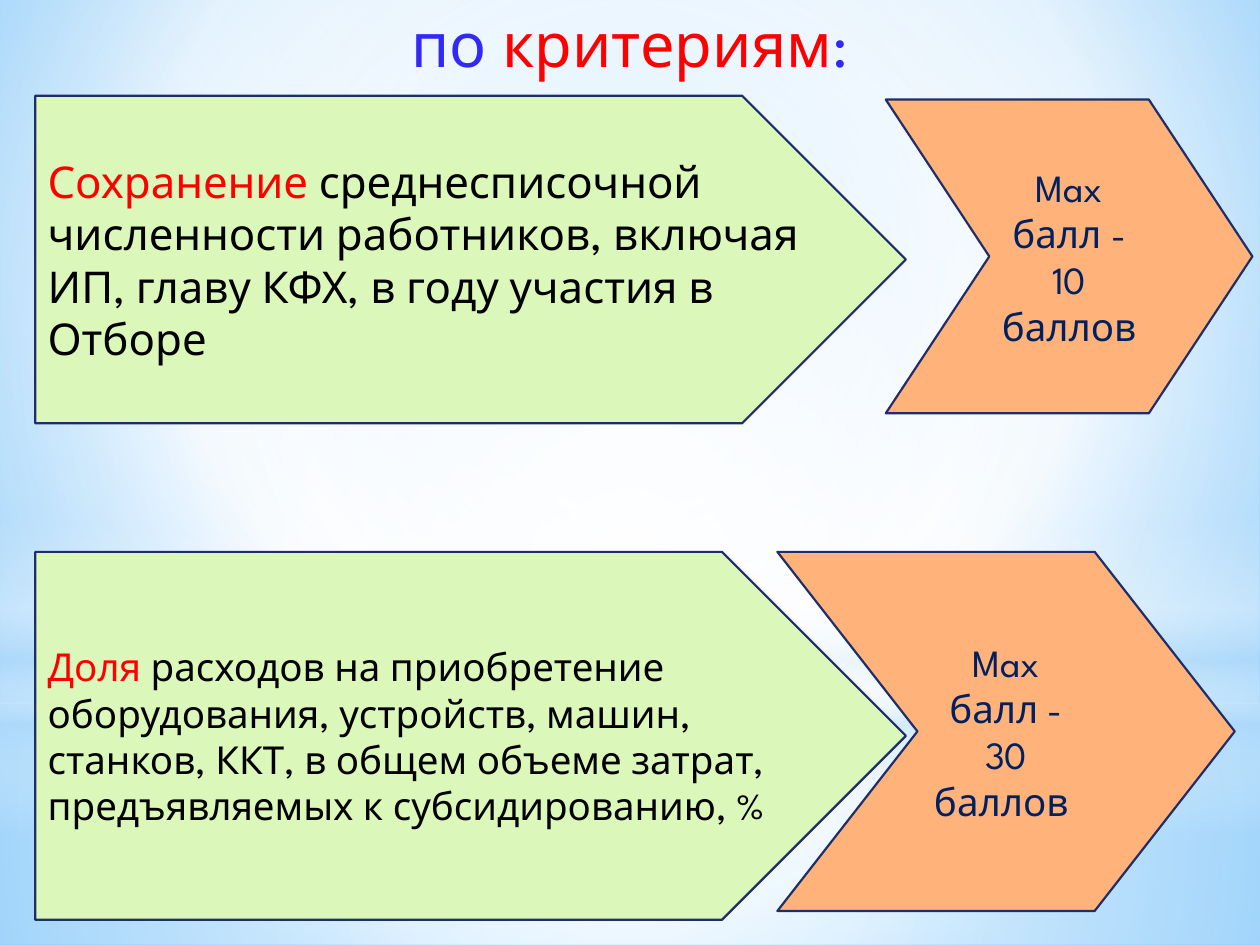
from pptx import Presentation
from pptx.dml.color import RGBColor
from pptx.enum.shapes import MSO_SHAPE
from pptx.enum.text import MSO_ANCHOR, PP_ALIGN
from pptx.oxml import parse_xml
from pptx.oxml.ns import nsdecls
from pptx.util import Inches, Pt

HUES = {
    "blue": "3329F7", "red": "FF0000", "black": "000000", "navy": "002060",
    "edge": "1F2E69", "green": "DCF7BA", "peach": "FFB37A",
    "white": "FFFFFF", "pale": "B4DCFA", "sky": "9ED5FF", "deep": "5BB9FF",
}
MID = (50, 50, 50, 50)


class Deck:
    """Holds the style and the current slide, and draws each kind of element."""

    def __init__(self):
        self.file = Presentation()
        self.file.slide_width, self.file.slide_height = Inches(10), Inches(7.5)
        self.slide = self.file.slides.add_slide(self.file.slide_layouts[6])
        self.font = {"name": "League Spartan"}
        self.frame = {"word_wrap": True, "vertical_anchor": MSO_ANCHOR.MIDDLE}

    def hue(self, name):
        return RGBColor.from_string(HUES[name])

    def apply(self, item, form):
        for key, value in form.items():
            setattr(item, key, value)

    def shade(self, fill, root, stops, rect=None):
        fill.gradient()
        old = root.xpath(".//a:gradFill")[0]
        marks = "".join(
            f'<a:gs pos="{pos * 1000}"><a:srgbClr val="{HUES[name]}">'
            f'<a:alpha val="{alpha * 1000}"/></a:srgbClr></a:gs>'
            for pos, name, alpha in stops)
        way = '<a:lin ang="5400000" scaled="0"/>'
        if rect:
            sides = " ".join(f'{s}="{v * 1000}"' for s, v in zip("ltrb", rect))
            way = f'<a:path path="circle"><a:fillToRect {sides}/></a:path>'
        new = parse_xml(f'<a:gradFill {nsdecls("a")} rotWithShape="1">'
                        f'<a:gsLst>{marks}</a:gsLst>{way}</a:gradFill>')
        old.getparent().replace(old, new)

    def ground(self, stops, rect):
        self.shade(self.slide.background.fill, self.slide._element, stops, rect)

    def shape(self, kind, box):
        item = self.slide.shapes.add_shape(kind, *map(Inches, box))
        item.shadow.inherit = False
        return item

    def glow(self, kind, box, stops, rect=None):
        item = self.shape(kind, box)
        item.line.fill.background()
        self.shade(item.fill, item._element, stops, rect)

    def text(self, frame, runs, size, align):
        para = frame.paragraphs[0]
        para.alignment = align
        for words, name in runs:
            run = para.add_run()
            run.text = words
            self.apply(run.font, {**self.font, "size": Pt(size)})
            run.font.color.rgb = self.hue(name)

    def title(self, box, runs, size):
        frame = self.slide.shapes.add_textbox(*map(Inches, box)).text_frame
        self.apply(frame, {"word_wrap": True})
        self.text(frame, runs, size, PP_ALIGN.CENTER)

    def arrow(self, kind, box, fill, runs, size, align, bend=0.5):
        item = self.shape(kind, box)
        item.adjustments[0] = bend
        item.fill.solid()
        item.fill.fore_color.rgb = self.hue(fill)
        item.line.color.rgb = self.hue("edge")
        item.line.width = Pt(1.25)
        self.apply(item.text_frame, self.frame)
        self.text(item.text_frame, runs, size, align)


def main():
    deck = Deck()
    deck.ground([(0, "sky", 100), (60, "white", 100), (100, "deep", 100)],
                (20, 10, 20, 60))
    deck.glow(MSO_SHAPE.RECTANGLE, (0, 5.58, 10, 1.92),
              [(0, "white", 91), (37, "white", 76), (100, "pale", 79)], MID)
    deck.glow(MSO_SHAPE.RECTANGLE, (0, 0, 10, 5.58),
              [(0, "white", 89), (48, "white", 62), (100, "pale", 79)], MID)
    deck.glow(MSO_SHAPE.RECTANGLE, (0, 4.12, 10, 2.5),
              [(0, "white", 0), (29, "white", 30), (45, "pale", 40),
               (55, "white", 26), (65, "pale", 60), (100, "white", 0)])
    deck.glow(MSO_SHAPE.OVAL, (0, 1.75, 10, 5.58),
              [(0, "white", 100), (56, "white", 0)], MID)
    deck.title((0, 0, 10, 7.37),
               [("по ", "blue"), ("критериям", "red"), (":", "blue")], 35)

    rows = [
        ("Сохранение", " среднесписочной численности работников, включая ИП, "
         "главу КФХ, в году участия в Отборе", 25, (0.28, 0.76, 6.91, 2.6),
         10, (7.03, 0.79, 2.91, 2.49), 0.33),
        ("Доля", " расходов на приобретение оборудования, устройств, машин, "
         "станков, ККТ, в общем объеме затрат, предъявляемых к "
         "субсидированию, %", 22, (0.28, 4.38, 6.91, 2.92),
         30, (6.17, 4.38, 3.63, 2.85), 0.39),
    ]
    for head, rest, size, plate, score, mark, bend in rows:
        deck.arrow(MSO_SHAPE.PENTAGON, plate, "green",
                   [(head, "red"), (rest, "black")], size, PP_ALIGN.LEFT)
        deck.arrow(MSO_SHAPE.CHEVRON, mark, "peach",
                   [(f"Max балл - {score} баллов ", "navy")], 22,
                   PP_ALIGN.CENTER, bend)
    deck.file.save("out.pptx")


if __name__ == "__main__":
    main()
